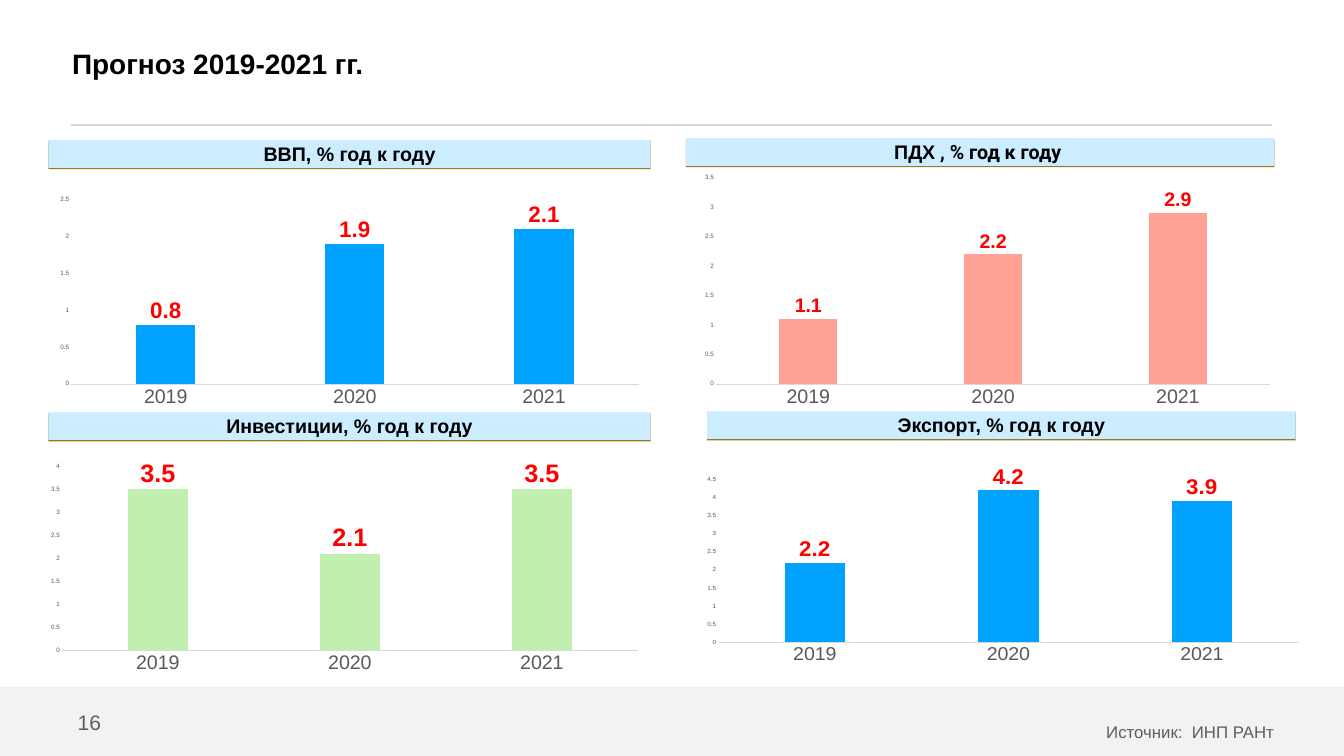
from lxml import etree
from pptx import Presentation
from pptx.chart.data import CategoryChartData
from pptx.dml.color import RGBColor
from pptx.enum.chart import XL_CHART_TYPE, XL_LABEL_POSITION, XL_TICK_MARK
from pptx.enum.shapes import MSO_CONNECTOR, MSO_SHAPE
from pptx.enum.text import MSO_ANCHOR, MSO_AUTO_SIZE, PP_ALIGN
from pptx.oxml import parse_xml
from pptx.oxml.ns import nsdecls, qn
from pptx.util import Emu, Pt

PX = 9144
TITLE_ONLY = 5
COLUMNS = XL_CHART_TYPE.COLUMN_CLUSTERED
OUTSIDE = XL_LABEL_POSITION.OUTSIDE_END
NO_TICK = XL_TICK_MARK.NONE
STRAIGHT = MSO_CONNECTOR.STRAIGHT
RECTANGLE = MSO_SHAPE.RECTANGLE
MIDDLE, TOP = MSO_ANCHOR.MIDDLE, MSO_ANCHOR.TOP
NO_FIT = MSO_AUTO_SIZE.NONE
LEFT, CENTER, RIGHT = PP_ALIGN.LEFT, PP_ALIGN.CENTER, PP_ALIGN.RIGHT

BLACK = RGBColor(0x00, 0x00, 0x00)
GRAY = RGBColor(0x5E, 0x5E, 0x5E)
AXIS_TEXT = RGBColor(0x59, 0x59, 0x59)
AXIS_LINE = RGBColor(0xD9, 0xD9, 0xD9)
RULE = RGBColor(0xD5, 0xD5, 0xD5)
BAND = RGBColor(0xF2, 0xF2, 0xF2)
HEADER = RGBColor(0xCC, 0xEC, 0xFF)
GOLD = RGBColor(0x94, 0x7C, 0x18)
BLUE = RGBColor(0x00, 0xA2, 0xFF)
SALMON = RGBColor(0xFF, 0xA2, 0x95)
GREEN = RGBColor(0xC0, 0xEF, 0xAF)
RED = RGBColor(0xFF, 0x00, 0x00)

YEARS = ["2019", "2020", "2021"]
UNIT = ", % год к году"
EXPORT_PLOT = {"x": 0.03, "y": 0.02, "w": 0.96, "h": 0.8}
PANELS = [
    ([("ВВП" + UNIT, "Arial")], (96, 278, 1195, 55),
     (96, 380, 1195, 437), (0.8, 1.9, 2.1), 2.5, BLUE, 32, None),
    ([("ПДХ", "Arial"), (" " + UNIT + " ", "Roboto")], (1361, 274, 1168, 55),
     (1376, 336, 1168, 482), (1.1, 2.2, 2.9), 3.5, SALMON, 28, None),
    ([("Инвестиции" + UNIT, "Arial")], (96, 818, 1195, 55),
     (77, 909, 1213, 437), (3.5, 2.1, 3.5), 4, GREEN, 36, None),
    ([("Экспорт" + UNIT, "Arial")], (1403, 816, 1168, 55),
     (1389, 922, 1200, 425), (2.2, 4.2, 3.9), 4.5, BLUE, 32, EXPORT_PLOT),
]


def scale(*lengths):
    return [Emu(length * PX) for length in lengths]


def style_font(font, size, color, bold=False, name="Arial"):
    font.name = name
    font.size = Pt(size)
    font.bold = bold
    font.color.rgb = color


def set_frame(frame, anchor, margins=(0, 0, 0, 0), wrap=True):
    frame.auto_size = NO_FIT
    frame.word_wrap = wrap
    frame.vertical_anchor = anchor
    (frame.margin_left, frame.margin_top,
     frame.margin_right, frame.margin_bottom) = scale(*margins)


def set_title(slide, text):
    title = slide.shapes.title
    title.left, title.top, title.width, title.height = scale(143, 0, 2014, 250)
    set_frame(title.text_frame, MIDDLE)
    para = title.text_frame.paragraphs[0]
    para.text = text
    para.alignment = LEFT
    style_font(para.font, 40, BLACK, bold=True)


def add_text(slide, area, text, size, align, anchor, wrap=True, spacing=1):
    box = slide.shapes.add_textbox(*scale(*area))
    set_frame(box.text_frame, anchor, wrap=wrap)
    para = box.text_frame.paragraphs[0]
    para.text = text
    para.alignment = align
    para.line_spacing = spacing
    style_font(para.font, size, GRAY)


def add_rectangle(slide, area, color):
    box = slide.shapes.add_shape(RECTANGLE, *scale(*area))
    box.shadow.inherit = False
    box.fill.solid()
    box.fill.fore_color.rgb = color
    box.line.fill.background()
    return box


def add_rule(slide, left, right, top):
    rule = slide.shapes.add_connector(STRAIGHT, *scale(left, top, right, top))
    rule.line.color.rgb = RULE
    rule.line.width = Pt(3)
    etree.SubElement(rule.element.spPr, qn("a:effectLst"))


def add_header(slide, area, spans):
    box = add_rectangle(slide, area, HEADER)
    effects = box.element.spPr.find(qn("a:effectLst"))
    effects.append(parse_xml(
        f'<a:outerShdw {nsdecls("a")} dist="{Pt(2)}" dir="5400000" rotWithShape="0">'
        f'<a:srgbClr val="{GOLD}"/></a:outerShdw>'))
    set_frame(box.text_frame, MIDDLE, (8, 3, 8, 5))
    para = box.text_frame.paragraphs[0]
    para.alignment = CENTER
    for text, font_name in spans:
        span = para.add_run()
        span.text = text
        style_font(span.font, 28, BLACK, bold=True, name=font_name)


def set_plot_layout(chart, layout):
    plot_area = chart.element.find(".//" + qn("c:plotArea"))
    for old in plot_area.findall(qn("c:layout")):
        plot_area.remove(old)
    sizes = "".join(f'<c:{key} val="{layout[key]}"/>' for key in "xywh")
    plot_area.insert(0, parse_xml(
        f'<c:layout {nsdecls("c")}><c:manualLayout><c:layoutTarget val="inner"/>'
        f'<c:xMode val="edge"/><c:yMode val="edge"/>{sizes}'
        f'</c:manualLayout></c:layout>'))


def add_column_chart(slide, area, values, top_value, color, label_size, layout):
    chart_data = CategoryChartData()
    chart_data.categories = YEARS
    chart_data.add_series("Series 1", values)
    chart = slide.shapes.add_chart(COLUMNS, *scale(*area), chart_data).chart
    chart.has_title = False
    chart.has_legend = False
    style_font(chart.font, 10, BLACK)

    for axis, size in ((chart.category_axis, 28), (chart.value_axis, 9)):
        axis.has_major_gridlines = False
        axis.major_tick_mark = axis.minor_tick_mark = NO_TICK
        style_font(axis.tick_labels.font, size, AXIS_TEXT)
    chart.category_axis.format.line.color.rgb = AXIS_LINE
    chart.category_axis.format.line.width = Pt(0.75)
    chart.value_axis.format.line.fill.background()
    chart.value_axis.minimum_scale = 0
    chart.value_axis.maximum_scale = top_value
    chart.value_axis.major_unit = 0.5

    plot = chart.plots[0]
    plot.gap_width = 219
    plot.overlap = -27
    plot.vary_by_categories = False
    series = plot.series[0]
    series.format.fill.solid()
    series.format.fill.fore_color.rgb = color
    labels = series.data_labels
    labels.show_value = True
    labels.position = OUTSIDE
    style_font(labels.font, label_size, RED, bold=True)
    if layout:
        set_plot_layout(chart, layout)


def main():
    deck = Presentation()
    deck.slide_width, deck.slide_height = scale(2667, 1500)
    slide = deck.slides.add_slide(deck.slide_layouts[TITLE_ONLY])
    add_rectangle(slide, (0, 1363, 2667, 137), BAND)
    add_rule(slide, 141, 2525, 248)
    set_title(slide, "Прогноз 2019-2021 гг.")
    add_text(slide, (429, 1411, 2099, 53), "Источник:  ИНП РАНт", 24, RIGHT, TOP,
             spacing=1.5)
    add_text(slide, (154, 1402, 35, 62), "16", 30, LEFT, MIDDLE, wrap=False)
    for spans, header_area, chart_area, *chart_options in PANELS:
        add_header(slide, header_area, spans)
        add_column_chart(slide, chart_area, *chart_options)
    deck.save("out.pptx")


if __name__ == "__main__":
    main()
